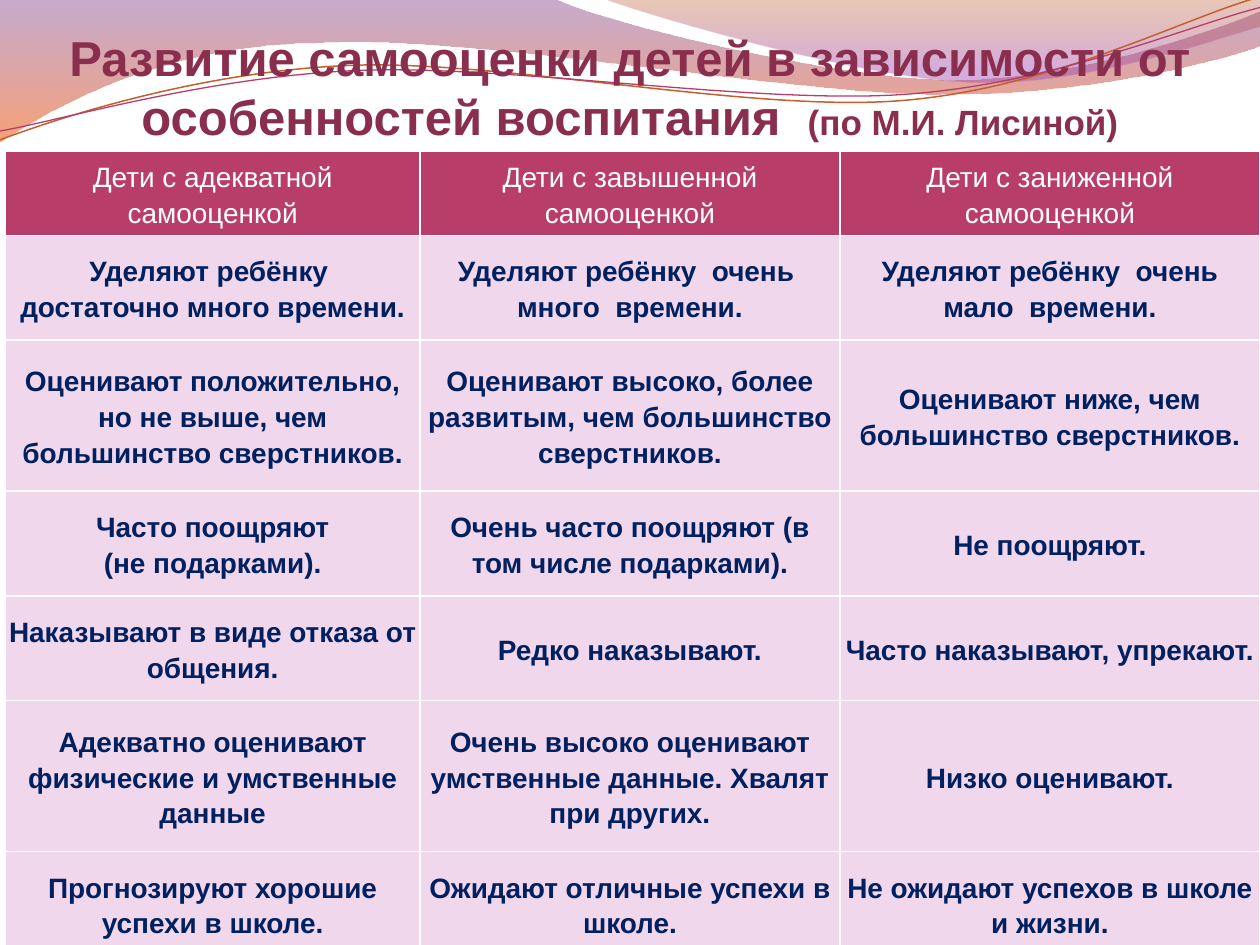
from math import cos, radians, sin

from lxml import etree
from pptx import Presentation
from pptx.dml.color import RGBColor
from pptx.enum.text import MSO_ANCHOR, PP_ALIGN
from pptx.oxml.ns import qn
from pptx.util import Pt

CENTER = PP_ALIGN.CENTER
MIDDLE, BOTTOM = MSO_ANCHOR.MIDDLE, MSO_ANCHOR.BOTTOM

THEME = {
    "font": "Arial",
    "title": "8A2E4E", "header": "B83D68", "body": "F1D7EC",
    "header_text": "FFFFFF", "body_text": "002060", "border": "FFFFFF",
    "title_size": 28, "author_size": 20, "table_size": 16,
}

TITLE = [
    ("Развитие самооценки детей в зависимости от особенностей воспитания  ", THEME["title_size"]),
    ("(по М.И. Лисиной)", THEME["author_size"]),
]

ROWS = [
    ("Дети с адекватной самооценкой", "Дети с завышенной самооценкой", "Дети с заниженной самооценкой"),
    ("Уделяют ребёнку  достаточно много времени.", "Уделяют ребёнку  очень  много  времени.",
     "Уделяют ребёнку  очень мало  времени."),
    ("Оценивают положительно, но не выше, чем большинство сверстников.",
     "Оценивают высоко, более развитым, чем большинство сверстников.",
     "Оценивают ниже, чем большинство сверстников."),
    ("Часто поощряют\n(не подарками).", "Очень часто поощряют (в том числе подарками).", "Не поощряют."),
    ("Наказывают в виде отказа от общения.", "Редко наказывают.", "Часто наказывают, упрекают."),
    ("Адекватно оценивают физические и умственные данные",
     "Очень высоко оценивают умственные данные. Хвалят при других.", "Низко оценивают."),
    ("Прогнозируют хорошие успехи в школе.", "Ожидают отличные успехи в школе.",
     "Не ожидают успехов в школе и жизни."),
]
COLUMN_WIDTHS = [236.9, 240, 240]
ROW_HEIGHTS = [33.1, 59.8, 86.4, 59.8, 59.8, 86.4, 59.8]

# Each outline: start point, then segments of one point (line) or three points (cubic curve).
WAVES = [
    {"start": (0, -0.72), "gradient": [(0, "834591", 45), (100, "F35307", 55)], "segments": [
        [(316.8, -0.72)],
        [(342.7, 12.2), (478.1, 45.4), (545.8, 45.4)], [(614.2, 45.4), (689.8, 18.7), (720, 6.5)],
        [(720.7, 25.9)],
        [(707.8, 31.7), (626.4, 54.7), (537.1, 54)], [(447.8, 54), (275, 20.2), (185, 24.5)],
        [(92.9, 25.2), (33.1, 59.8), (-0.72, 81.4)]]},
    {"start": (344.9, -0.72), "gradient": [(0, "B74915", 30), (80, "A14BB4", 45)], "segments": [
        [(366.5, 7.9), (491, 44.6), (553.7, 46.8)], [(616.3, 49.7), (691.9, 23), (720, 15.1)],
        [(720, 0)]]},
    {"start": (0, 79.9), "line": ("C45F30", 0.85), "pivot": (359.3, 41.4), "segments": [
        [(34.6, 67), (113.8, 41), (199.4, 37.4)], [(284.4, 33.8), (427, 64.1), (513.4, 57.6)],
        [(599.8, 51.1), (675.4, 10.8), (718.6, -1.4)]]},
    {"start": (0, 74.9), "line": ("B83D68", 0.75), "pivot": (359.6, 42.5), "segments": [
        [(33.8, 69.1), (118.1, 43.9), (203.8, 40.3)], [(290.2, 36.7), (429.8, 59.8), (516.2, 54)],
        [(601.9, 48.2), (677.5, 15.1), (720, 4.3)]]},
]
WAVE_TILT = 2.7


def color(name):
    return RGBColor.from_string(THEME.get(name, name))


def apply(target, values):
    for name, value in values.items():
        setattr(target, name, value)


def add_run(paragraph, text, size, color_name, bold):
    run = paragraph.add_run()
    run.text = text
    apply(run.font, {"name": THEME["font"], "size": Pt(size), "bold": bold})
    run.font.color.rgb = color(color_name)


def level_point(point, pivot):
    x, y = point[0] - pivot[0], point[1] - pivot[1]
    angle = radians(WAVE_TILT)
    return pivot[0] + x * cos(angle) - y * sin(angle), pivot[1] + x * sin(angle) + y * cos(angle)


def bend_segments(shape, segments):
    lines = iter(list(shape._element.spPr.iter(qn("a:lnTo"))))
    for segment in segments:
        first, *others = [next(lines) for point in segment]
        if others:
            first.tag = qn("a:cubicBezTo")
            for line in others:
                first.append(line[0])
                line.getparent().remove(line)


def set_gradient(shape, stops):
    gradient = etree.Element(qn("a:gradFill"), rotWithShape="1")
    stop_list = etree.SubElement(gradient, qn("a:gsLst"))
    for position, value, opacity in stops:
        stop = etree.SubElement(stop_list, qn("a:gs"), pos=str(position * 1000))
        stop_color = etree.SubElement(stop, qn("a:srgbClr"), val=value)
        etree.SubElement(stop_color, qn("a:alpha"), val=str(opacity * 1000))
    etree.SubElement(gradient, qn("a:lin"), ang="5400000", scaled="0")
    shape.fill.background()
    empty_fill = shape._element.spPr.find(qn("a:noFill"))
    empty_fill.getparent().replace(empty_fill, gradient)


def add_wave(slide, wave):
    closed = "gradient" in wave
    points = [wave["start"], *(point for segment in wave["segments"] for point in segment)]
    if not closed:
        points = [level_point(point, wave["pivot"]) for point in points]
    vertices = [(Pt(x), Pt(y)) for x, y in points]
    builder = slide.shapes.build_freeform(*vertices[0])
    builder.add_line_segments(vertices[1:], close=closed)
    shape = builder.convert_to_shape()
    bend_segments(shape, wave["segments"])
    shape.shadow.inherit = False
    if closed:
        set_gradient(shape, wave["gradient"])
        shape.line.fill.background()
    else:
        value, width = wave["line"]
        shape.rotation = 360 - WAVE_TILT
        shape.fill.background()
        shape.line.color.rgb = color(value)
        shape.line.width = Pt(width)


def add_title(slide):
    frame = slide.shapes.add_textbox(0, 0, Pt(720), Pt(82.8)).text_frame
    apply(frame, {"word_wrap": True, "vertical_anchor": BOTTOM, "margin_left": 0,
                  "margin_right": 0, "margin_top": Pt(3.6), "margin_bottom": 0})
    paragraph = frame.paragraphs[0]
    paragraph.alignment = CENTER
    for text, size in TITLE:
        add_run(paragraph, text, size, "title", True)


def set_borders(cell):
    properties = cell._tc.get_or_add_tcPr()
    for index, side in enumerate(("a:lnL", "a:lnR", "a:lnT", "a:lnB")):
        line = etree.Element(qn(side), w=str(Pt(1)))
        fill = etree.SubElement(line, qn("a:solidFill"))
        etree.SubElement(fill, qn("a:srgbClr"), val=THEME["border"])
        properties.insert(index, line)


def fill_cell(cell, text, kind):
    margin = Pt(2)
    apply(cell, {"vertical_anchor": MIDDLE, "margin_left": margin, "margin_right": margin,
                 "margin_top": margin, "margin_bottom": margin})
    cell.fill.solid()
    cell.fill.fore_color.rgb = color(kind)
    set_borders(cell)
    frame = cell.text_frame
    for index, line in enumerate(text.split("\n")):
        paragraph = frame.add_paragraph() if index else frame.paragraphs[0]
        apply(paragraph, {"alignment": CENTER, "line_spacing": 1.15})
        add_run(paragraph, line, THEME["table_size"], kind + "_text", kind == "body")


def add_comparison(slide):
    table = slide.shapes.add_table(len(ROWS), len(COLUMN_WIDTHS), Pt(3.1), Pt(86.4),
                                   Pt(sum(COLUMN_WIDTHS)), Pt(sum(ROW_HEIGHTS))).table
    for column, width in zip(table.columns, COLUMN_WIDTHS):
        column.width = Pt(width)
    for row_index, (row, height, texts) in enumerate(zip(table.rows, ROW_HEIGHTS, ROWS)):
        row.height = Pt(height)
        for cell, text in zip(row.cells, texts):
            fill_cell(cell, text, "body" if row_index else "header")


def main():
    presentation = Presentation()
    presentation.slide_width, presentation.slide_height = Pt(720), Pt(540)
    slide = presentation.slides.add_slide(presentation.slide_layouts[6])
    for wave in WAVES:
        add_wave(slide, wave)
    add_title(slide)
    add_comparison(slide)
    presentation.save("out.pptx")


if __name__ == "__main__":
    main()
